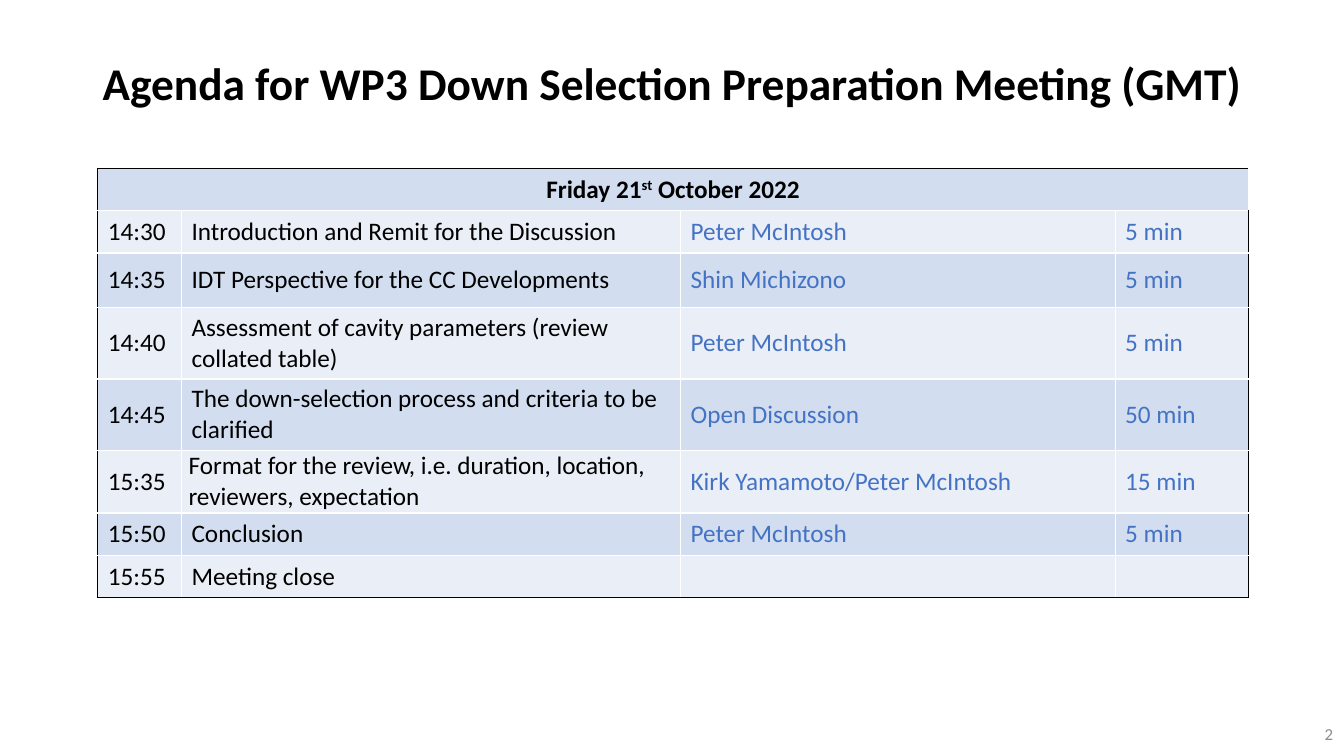
from dataclasses import dataclass

from lxml import etree
from pptx import Presentation
from pptx.dml.color import RGBColor
from pptx.enum.text import MSO_ANCHOR, PP_ALIGN
from pptx.oxml.ns import qn
from pptx.util import Inches, Pt

LEFT, CENTER, RIGHT = PP_ALIGN.LEFT, PP_ALIGN.CENTER, PP_ALIGN.RIGHT
TOP, MIDDLE = MSO_ANCHOR.TOP, MSO_ANCHOR.MIDDLE


@dataclass(frozen=True)
class Theme:
    font: str = "Calibri"
    ink: str = "000000"
    accent: str = "4472C4"
    muted: str = "8C8C8C"
    rule: str = "FFFFFF"
    bands: tuple = ("D2DEEF", "EAEFF7")
    title: float = 32.4
    body: float = 18
    small: float = 12


THEME = Theme()
COL_WIDTHS = (0.83, 4.95, 4.31, 1.32)
ROW_HEIGHTS = (0.42, 0.42, 0.54, 0.71, 0.71, 0.62, 0.42, 0.42)
DATE = (("Friday 21", 0), ("st", 30), (" October 2022", 0))
AGENDA = (
    ("14:30", "Introduction and Remit for the Discussion", "Peter McIntosh", "5 min"),
    ("14:35", "IDT Perspective for the CC Developments", "Shin Michizono", "5 min"),
    ("14:40", "Assessment of cavity parameters (review collated table)",
     "Peter McIntosh", "5 min"),
    ("14:45", "The down-selection process and criteria to be clarified",
     "Open Discussion", "50 min"),
    ("15:35", "Format for the review, i.e. duration, location, reviewers, expectation",
     "Kirk Yamamoto/Peter McIntosh", "15 min"),
    ("15:50", "Conclusion", "Peter McIntosh", "5 min"),
    ("15:55", "Meeting close", "", ""),
)
TIGHT_CELL = (5, 1)  # this cell has no top and bottom margins


def add_run(p, text, size, color, bold=False, baseline=0):
    r = p.add_run()
    r.text = text
    formats = {"name": THEME.font, "size": Pt(size), "bold": bold}
    for name, value in formats.items():
        setattr(r.font, name, value)
    r.font.color.rgb = RGBColor.from_string(color)
    if baseline:
        r.font._element.set("baseline", f"{baseline * 1000}")


def add_text(s, box, text, size, color, align=LEFT, bold=False):
    tf = s.shapes.add_textbox(*map(Inches, box)).text_frame
    formats = {"word_wrap": True, "vertical_anchor": MIDDLE}
    if align == LEFT:
        formats["margin_right"] = 0
    for name, value in formats.items():
        setattr(tf, name, value)
    p = tf.paragraphs[0]
    p.alignment = align
    add_run(p, text, size, color, bold)


def set_borders(cell, colors):
    """Draw the left, right, top and bottom borders, in that order."""
    tcPr = cell._tc.get_or_add_tcPr()
    for i, (side, color) in enumerate(zip("LRTB", colors)):
        ln = etree.Element(qn(f"a:ln{side}"), w=str(Pt(1)))
        fill = etree.SubElement(ln, qn("a:solidFill"))
        etree.SubElement(fill, qn("a:srgbClr"), val=color)
        tcPr.insert(i, ln)


def style_cell(cell, row, col):
    cell.fill.solid()
    cell.fill.fore_color.rgb = RGBColor.from_string(THEME.bands[row % 2])
    cell.vertical_anchor = MIDDLE
    outer = (col == 0, col == len(COL_WIDTHS) - 1,
             row == 0, row == len(ROW_HEIGHTS) - 1)
    set_borders(cell, [THEME.ink if edge else THEME.rule for edge in outer])


def add_agenda(s, left, top):
    box = (left, top, sum(COL_WIDTHS), sum(ROW_HEIGHTS))
    table = s.shapes.add_table(len(ROW_HEIGHTS), len(COL_WIDTHS),
                               *map(Inches, box)).table
    for column, width in zip(table.columns, COL_WIDTHS):
        column.width = Inches(width)
    for row, height in zip(table.rows, ROW_HEIGHTS):
        row.height = Inches(height)
    for i in range(len(ROW_HEIGHTS)):
        for j in range(len(COL_WIDTHS)):
            style_cell(table.cell(i, j), i, j)

    header = table.cell(0, 0)
    header.merge(table.cell(0, len(COL_WIDTHS) - 1))
    p = header.text_frame.paragraphs[0]
    p.alignment = CENTER
    for text, baseline in DATE:
        add_run(p, text, THEME.body, THEME.ink, True, baseline)

    for i, entry in enumerate(AGENDA, 1):
        for j, text in enumerate(entry):
            if text:
                color = THEME.ink if j < 2 else THEME.accent
                p = table.cell(i, j).text_frame.paragraphs[0]
                add_run(p, text, THEME.body, color)

    tight = {"margin_left": Inches(0.07), "margin_right": Inches(0.07),
             "margin_top": 0, "margin_bottom": 0, "vertical_anchor": TOP}
    for name, value in tight.items():
        setattr(table.cell(*TIGHT_CELL), name, value)


def main():
    prs = Presentation()
    prs.slide_width, prs.slide_height = Inches(13.33), Inches(7.5)
    s = prs.slides.add_slide(prs.slide_layouts[6])
    add_text(s, (0.92, 0.4, 11.5, 0.84),
             "Agenda for WP3 Down Selection Preparation Meeting (GMT)",
             THEME.title, THEME.ink, bold=True)
    add_text(s, (10.32, 7.08, 3, 0.4), "2", THEME.small, THEME.muted, RIGHT)
    add_agenda(s, 0.97, 1.67)
    prs.save("out.pptx")


if __name__ == "__main__":
    main()
